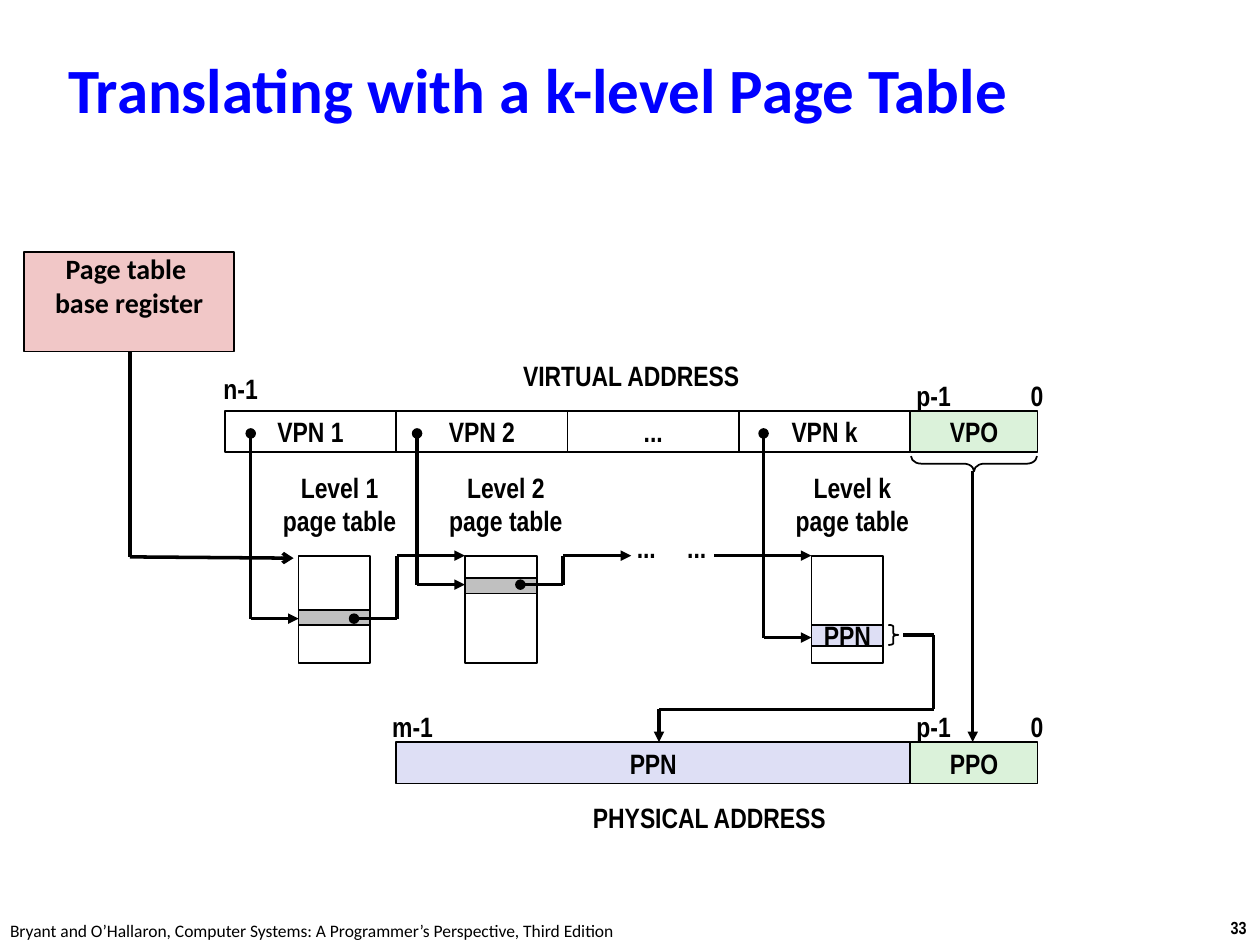
from dataclasses import dataclass
from itertools import pairwise
from typing import Any

from lxml.etree import SubElement
from pptx import Presentation
from pptx.dml.color import RGBColor
from pptx.enum.shapes import MSO_CONNECTOR, MSO_SHAPE
from pptx.enum.text import MSO_ANCHOR, MSO_AUTO_SIZE, PP_ALIGN
from pptx.oxml.ns import qn
from pptx.util import Inches, Pt

COLORS = {"ink": "000000", "title": "0000FF", "register": "F1C7C7",
          "offset": "DBF2DA", "page": "DEDFF5", "entry": "C0C0C0"}


@dataclass
class Diagram:
    """Draws on one slide with a grid of 100 columns by 75 rows."""

    slide: Any
    font: str = "Arial Narrow"
    size: float = 16
    cell: int = Inches(0.1)

    def place(self, *cells):
        return [round(c * self.cell) for c in cells]

    def set_text(self, owner, text, font=None, size=None, bold=True, color="ink",
                 align=PP_ALIGN.CENTER, anchor=MSO_ANCHOR.MIDDLE, wrap=False, inset=0):
        frame = owner.text_frame
        frame.text = text
        frame.word_wrap = wrap
        frame.auto_size = MSO_AUTO_SIZE.NONE
        frame.vertical_anchor = anchor
        frame.margin_left = frame.margin_right = Inches(inset)
        frame.margin_top = frame.margin_bottom = 0
        for paragraph in frame.paragraphs:
            paragraph.alignment = align
            paragraph.font.name = font or self.font
            paragraph.font.size = Pt(size or self.size)
            paragraph.font.bold = bold
            paragraph.font.color.rgb = RGBColor.from_string(COLORS[color])

    def title(self, text, *cells):
        heading = self.slide.shapes.title
        heading.left, heading.top, heading.width, heading.height = self.place(*cells)
        self.set_text(heading, text, "Calibri", 36, color="title",
                      align=PP_ALIGN.LEFT, wrap=True, inset=0.1)

    def label(self, text, *cells, **style):
        self.set_text(self.slide.shapes.add_textbox(*self.place(*cells)), text, **style)

    def outline(self, preset, *cells, fill=None):
        outlined = self.slide.shapes.add_shape(preset, *self.place(*cells))
        outlined.shadow.inherit = False
        if fill:
            outlined.fill.solid()
            outlined.fill.fore_color.rgb = RGBColor.from_string(COLORS[fill])
        else:
            outlined.fill.background()
        outlined.line.color.rgb = RGBColor.from_string(COLORS["ink"])
        outlined.line.width = Pt(1)
        return outlined

    def box(self, *cells, text="", fill=None, **style):
        field = self.outline(MSO_SHAPE.RECTANGLE, *cells, fill=fill)
        if text:
            self.set_text(field, text, **style)

    def brace(self, *cells, curve, turn=0):
        bracket = self.outline(MSO_SHAPE.RIGHT_BRACE, *cells)
        bracket.adjustments[0] = curve
        bracket.rotation = turn

    def route(self, *points, start=None, end="triangle"):
        legs = list(pairwise(points))
        for number, (origin, target) in enumerate(legs):
            leg = self.slide.shapes.add_connector(
                MSO_CONNECTOR.STRAIGHT, *self.place(*origin, *target))
            leg.line.color.rgb = RGBColor.from_string(COLORS["ink"])
            leg.line.width = Pt(2)
            stroke = leg._element.spPr.find(qn("a:ln"))
            if start and number == 0:
                SubElement(stroke, qn("a:headEnd"), type=start)
            if end and number == len(legs) - 1:
                SubElement(stroke, qn("a:tailEnd"), type=end)
            SubElement(leg._element.spPr, qn("a:effectLst"))


def main():
    deck = Presentation()
    deck.slide_width, deck.slide_height = Inches(10), Inches(7.5)
    diagram = Diagram(deck.slides.add_slide(deck.slide_layouts[5]))

    diagram.title("Translating with a k-level Page Table", 4.4, 2.7, 90.6, 8.6)
    diagram.label("33", 96.6, 72.3, 3.4, 2.7, size=10)
    diagram.label("Bryant and O’Hallaron, Computer Systems: "
                  "A Programmer’s Perspective, Third Edition",
                  0.8, 72.5, 49, 2.7, font="Calibri", size=10, bold=False,
                  align=PP_ALIGN.LEFT)

    table_top, table_width, table_height = 44.1, 5.7, 8.5
    diagram.box(1.9, 20, 16.7, 7.9, text="Page table \vbase register",
                fill="register", font="Calibri", anchor=MSO_ANCHOR.TOP)
    diagram.route((10.3, 27.9), (10.3, 44.2), (23.3, 44.3), end="arrow")

    vpn_left, vpn_width, field_height = 17.85, 13.6, 3.3
    virtual_top, physical_top = 32.6, 58.9
    offset_left, offset_width = vpn_left + 4 * vpn_width, 10.1
    for column, name in enumerate(["VPN 1", "VPN 2", "...", "VPN k"]):
        diagram.box(vpn_left + column * vpn_width, virtual_top, vpn_width,
                    field_height, text=name)
    diagram.box(vpn_left + vpn_width, physical_top, 3 * vpn_width, field_height,
                text="PPN", fill="page")
    for top, name in [(virtual_top, "VPO"), (physical_top, "PPO")]:
        diagram.box(offset_left, top, offset_width, field_height,
                    text=name, fill="offset")
        diagram.label("p-1", 71.7, top - 3.1, 4.8, 3.7)
        diagram.label("0", 80.8, top - 3.1, 3, 3.7)
    diagram.label("n-1", 16.7, 29, 4.8, 3.7)
    diagram.label("m-1", 30.1, 55.8, 5.3, 3.7)
    diagram.label("VIRTUAL ADDRESS", 40.4, 27.9, 19.4, 3.7)
    diagram.label("PHYSICAL ADDRESS", 45.9, 63, 20.8, 3.7)

    levels = [("1", 23.7, 49.1, 48.4, 1.2, "", "entry"),
              ("2", 36.9, 46.4, 45.9, 1.2, "", "entry"),
              ("k", 64.4, 50.6, 49.6, 1.7, "PPN", "page")]
    for level, left, index, entry_top, entry_height, entry, fill in levels:
        diagram.label(f"Level {level}\npage table", left - 2.3, 36.8, 11.1, 6.4)
        diagram.box(left, table_top, table_width, table_height)
        diagram.box(left, entry_top, table_width, entry_height, text=entry, fill=fill)
        diagram.route((left - 3.8, 34.4), (left - 3.8, index), (left, index),
                      start="oval")
        if not entry:
            diagram.route((left + 4.4, index), (left + 7.8, index),
                          (left + 7.8, table_top), (left + 13.2, table_top),
                          start="oval")
    for left in (49.5, 53.5):
        diagram.label("...", left, 41.6, 3.6, 3.7)
    diagram.route((56.7, table_top), (64.4, table_top))

    diagram.brace(76.7, 31.8, 1.2, 10, curve=0.68, turn=90)
    diagram.brace(70.5, 49.6, 0.8, 1.6, curve=0.16)
    diagram.route((77.2, 37.4), (77.2, physical_top))
    diagram.route((71.7, 50.4), (74.1, 50.4), (74.1, 56.3), (52.3, 56.3),
                  (52.3, physical_top))

    deck.save("out.pptx")


if __name__ == "__main__":
    main()
